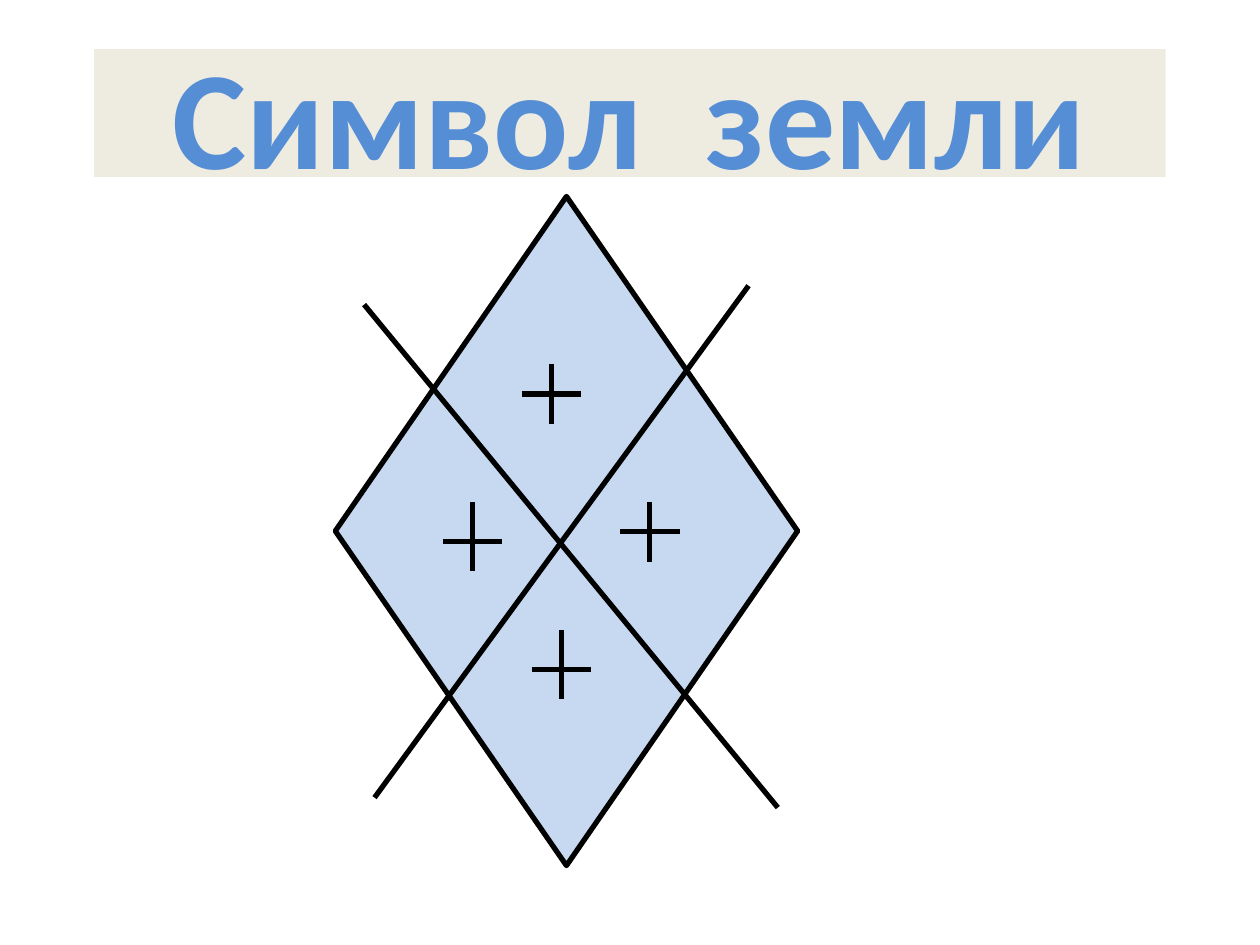
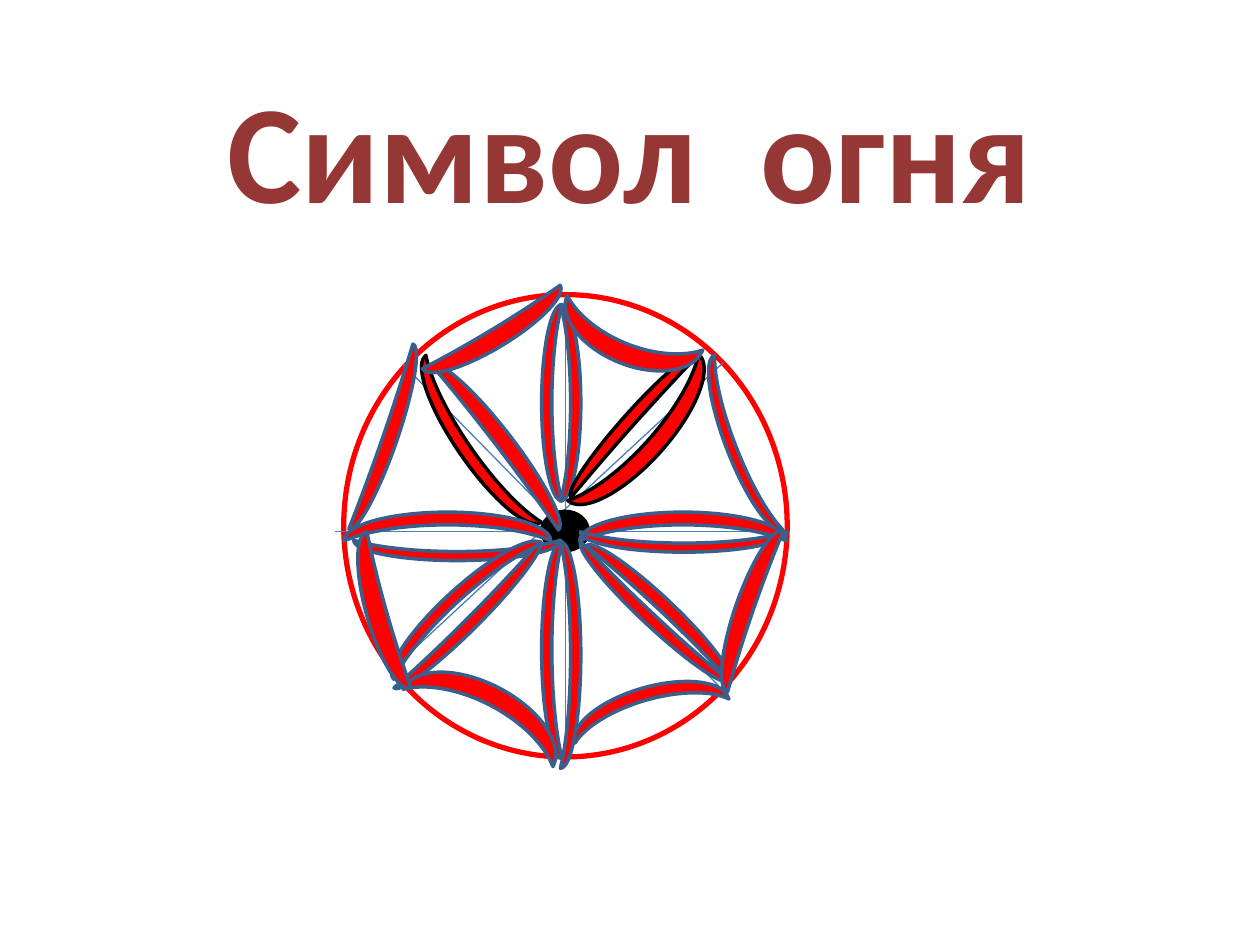
from collections import namedtuple

from pptx import Presentation
from pptx.dml.color import RGBColor
from pptx.enum.shapes import MSO_CONNECTOR as Connector, MSO_SHAPE as Preset
from pptx.enum.text import MSO_ANCHOR as Anchor, PP_ALIGN as Align
from pptx.oxml.ns import qn
from pptx.oxml.xmlchemy import OxmlElement
from pptx.util import Cm, Pt

COLOURS = {
    "black": "000000",
    "white": "FFFFFF",
    "sand": "EEECE1",
    "sky": "558ED5",
    "pale_blue": "C6D9F1",
    "maroon": "953735",
    "flame": "FF0000",
    "spoke": "4B7EBC",
    "petal_edge": "3A5F8C",
}
FONT = "Calibri"
BLANK_LAYOUT = 6

Box = namedtuple("Box", "left top width height")
Petal = namedtuple("Petal", "left top width height turn flip bulge edge",
                   defaults=(0, False, 0.5, "petal_edge"))

EARTH_TITLE = Box(1.9, 0.99, 21.6, 2.58)
EARTH_BOX = Box(6.76, 3.96, 9.32, 13.49)
DIAGONALS = [(0.58, 2.18, 8.92, 12.32), (0.79, 12.12, 8.33, 1.8)]
SEEDS = [
    (4.36, 3.98, 0.6, 0.6),
    (6.34, 6.76, 0.6, 0.6),
    (2.77, 6.96, 0.79, 0.6),
    (4.56, 9.53, 0.79, 0.6),
]
SEED_ARM = 0.6

FIRE_TITLE = Box(1.9, 0.79, 21.6, 4.37)
FIRE_BOX = Box(6.93, 5.94, 8.94, 9.32)
HUB = Box(3.99, 4.37, 0.94, 0.79)
SPOKES = [
    (4.47, 0, 4.47, 9.35),
    (-0.18, 4.78, 8.74, 4.78),
    (1.19, 1.4, 7.65, 7.98),
    (0.99, 7.54, 7.65, 1.37),
]
PETALS = [
    Petal(3.99, 0.2, 0.41, 3.96),
    Petal(4.37, 0.2, 0.41, 3.96, flip=True),
    Petal(3.99, 4.98, 0.41, 4.37),
    Petal(4.37, 4.98, 0.41, 4.57, flip=True),
    Petal(0.74, 0.94, 0.33, 3.94, 199.1, False, 0.875),
    Petal(5.64, 0.58, 0.28, 3.91, 221.8, True, 0.875, "black"),
    Petal(6.55, 2.59, 0.58, 4.17, 270, True, 0.442),
    Petal(2.08, 3.07, 0.41, 4.17, 270, False, 0.442),
    Petal(2.31, 1.02, 0.56, 4.09, 325.3, False, 0.442, "black"),
    Petal(2.44, 4.47, 0.3, 4.17, 224.9, False, 0.792),
    Petal(6.27, 4.32, 0.33, 3.94, 133.2, False, 0.792),
    Petal(6.02, 4.45, 0.3, 4.09, 133.2, True, 0.792),
    Petal(2.08, 4.17, 0.51, 4.06, 227.7, True, 0.442),
    Petal(1.8, 2.59, 0.58, 4.17, 270, True, 0.442),
    Petal(3.02, 0.89, 0.38, 4.17, 322.5, True, 0.875),
    Petal(6.65, 2.9, 0.41, 4.17, 270, False, 0.442),
    Petal(5.74, 0.94, 0.74, 3.96, 221.8, False, 0.462, "black"),
    Petal(7.72, 1.17, 0.46, 3.78, 158.7, True, 0.412),
    Petal(7.9, 4.6, 0.41, 3.43, 199.1, True, 0.875),
    Petal(2.46, 6.63, 0.91, 3.4, 297.3, True, 0.43),
    Petal(5.77, 6.65, 0.69, 3.23, 254, True, 0.365),
    Petal(0.46, 4.78, 0.46, 3.28, 164.2, True, 0.875),
    Petal(2.87, -0.79, 0.43, 3.25, 238.8, False, 0.875),
    Petal(5.28, -0.51, 0.86, 2.95, 111.9, True, 0.473),
]


def colour(name):
    """Return the named colour."""
    return RGBColor.from_string(COLOURS[name])


def add_text(slide, box, text, *, size, ink, fill=None):
    """Add a bold centred line of text, on a band if a fill is given."""
    shape = slide.shapes.add_textbox(*map(Cm, box))
    if fill:
        shape.fill.solid()
        shape.fill.fore_color.rgb = colour(fill)
    frame = shape.text_frame
    frame.word_wrap = True
    frame.vertical_anchor = Anchor.MIDDLE
    paragraph = frame.paragraphs[0]
    paragraph.alignment = Align.CENTER
    run = paragraph.add_run()
    run.text = text
    run.font.name = FONT
    run.font.size = Pt(size)
    run.font.bold = True
    run.font.color.rgb = colour(ink)


def add_title(slide, box, text, ink, fill=None):
    """Add the large slide title."""
    add_text(slide, box, text, size=80, ink=ink, fill=fill)


def add_preset(slide, preset, box, fill, edge, weight):
    """Add a filled and outlined preset shape without a shadow."""
    shape = slide.shapes.add_shape(preset, *map(Cm, box))
    shape.shadow.inherit = False
    shape.fill.solid()
    shape.fill.fore_color.rgb = colour(fill)
    shape.line.color.rgb = colour(edge)
    shape.line.width = Pt(weight)
    return shape


def add_line(slide, box, ends, ink, weight):
    """Add a straight line between two points given relative to the box."""
    x1, y1, x2, y2 = ends
    line = slide.shapes.add_connector(
        Connector.STRAIGHT, Cm(box.left + x1), Cm(box.top + y1),
        Cm(box.left + x2), Cm(box.top + y2))
    line.line.color.rgb = colour(ink)
    line.line.width = Pt(weight)
    line.element.spPr.append(OxmlElement("a:effectLst"))


def inside(box, part):
    """Return the part's box moved into the given box."""
    return Box(box.left + part.left, box.top + part.top, part.width, part.height)


def add_petal(slide, box, petal):
    """Add one turned crescent of the fire wheel."""
    shape = add_preset(slide, Preset.MOON, inside(box, petal), "flame", petal.edge, 2)
    shape.adjustments[0] = petal.bulge
    shape.rotation = petal.turn
    if petal.flip:
        shape.element.spPr.find(qn("a:xfrm")).set("flipH", "1")


def draw_earth(slide, box):
    """Draw the divided diamond with a seed cross in each quarter."""
    add_preset(slide, Preset.DIAMOND, box, "pale_blue", "black", 3)
    crosses = [
        ends
        for x, y, up, down in SEEDS
        for ends in ((x, y - up, x, y + down), (x - SEED_ARM, y, x + SEED_ARM, y))
    ]
    for ends in DIAGONALS + crosses:
        add_line(slide, box, ends, "black", 3)


def draw_fire(slide, box):
    """Draw the wheel with its spokes, hub and petals."""
    add_preset(slide, Preset.OVAL, box, "white", "flame", 3)
    for ends in SPOKES:
        add_line(slide, box, ends, "spoke", 0.75)
    add_preset(slide, Preset.OVAL, inside(box, HUB), "black", "black", 2)
    for petal in PETALS:
        add_petal(slide, box, petal)


def main():
    """Build and save the presentation."""
    presentation = Presentation()
    presentation.slide_width = Cm(25.4)
    presentation.slide_height = Cm(19.05)
    blank = presentation.slide_layouts[BLANK_LAYOUT]

    earth = presentation.slides.add_slide(blank)
    add_title(earth, EARTH_TITLE, "Символ  земли", "sky", "sand")
    draw_earth(earth, EARTH_BOX)

    fire = presentation.slides.add_slide(blank)
    add_title(fire, FIRE_TITLE, "Символ  огня", "maroon")
    draw_fire(fire, FIRE_BOX)

    presentation.save("out.pptx")


if __name__ == "__main__":
    main()
